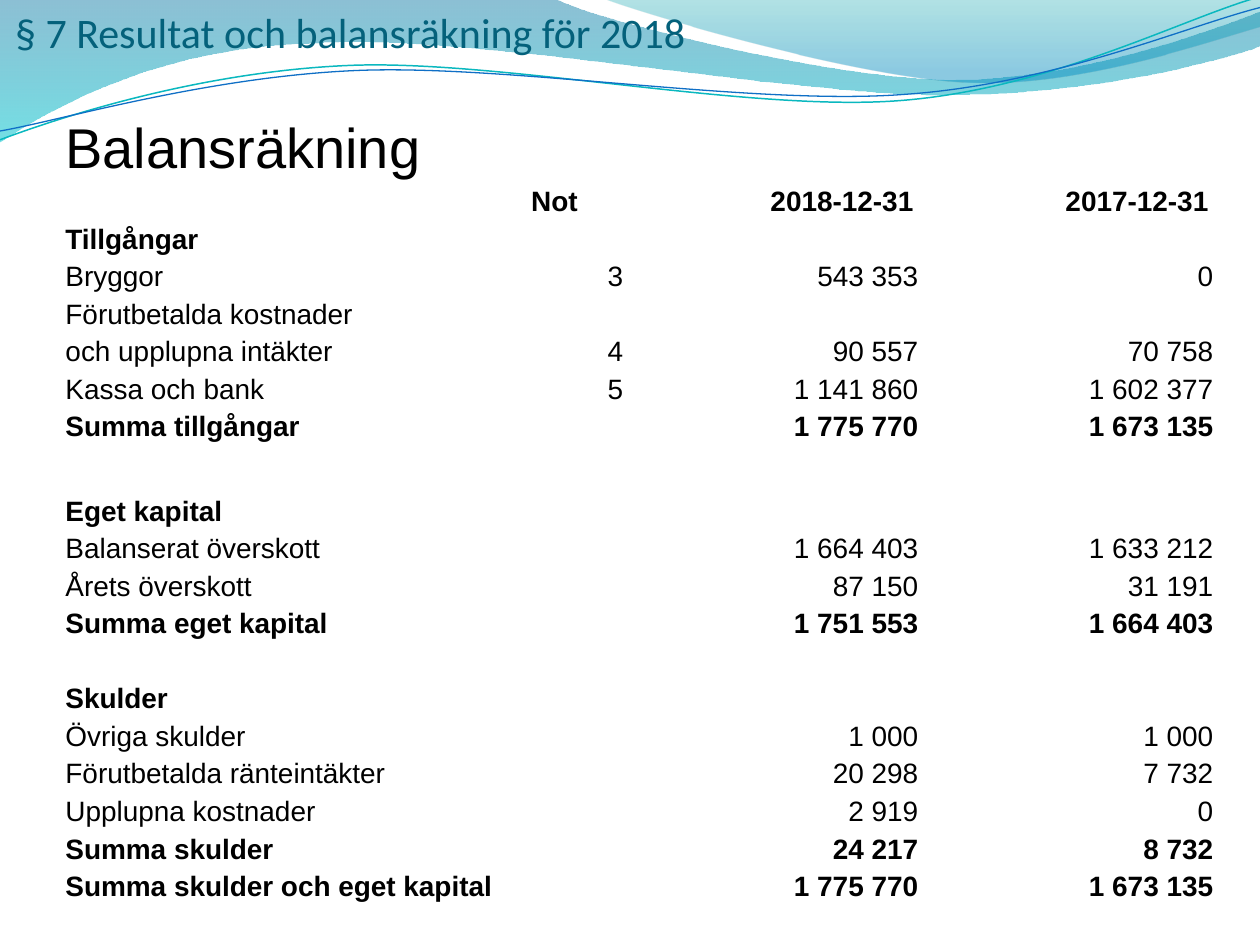
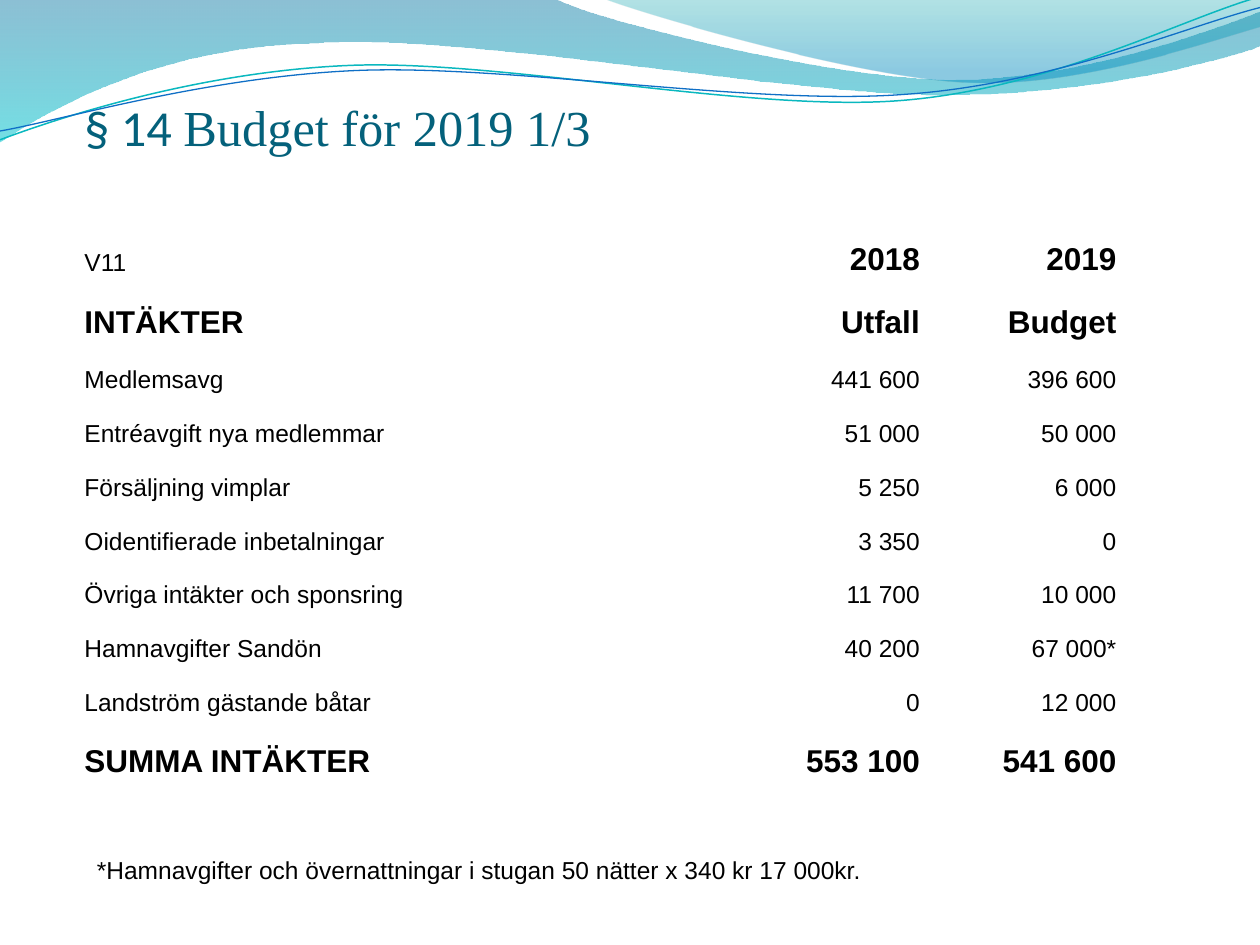
from dataclasses import dataclass

from lxml import etree
from pptx import Presentation
from pptx.dml.color import RGBColor
from pptx.enum.text import MSO_ANCHOR, MSO_AUTO_SIZE, PP_ALIGN
from pptx.oxml.ns import qn
from pptx.util import Inches, Pt

LEFT, MID, RIGHT = PP_ALIGN.LEFT, PP_ALIGN.CENTER, PP_ALIGN.RIGHT
TOP, BOTTOM = MSO_ANCHOR.TOP, MSO_ANCHOR.BOTTOM
NO_FIT = MSO_AUTO_SIZE.NONE
NO_STYLE = "{2D5ABB26-0587-4C30-8999-92F81FD0307C}"
TITLE_ONLY = 5


@dataclass(frozen=True)
class Theme:
    title: str = "04617B"
    text: str = "000000"
    teal: str = "0AB8BF"
    blue: str = "0F6FC6"
    head: str = "Calibri"
    serif: str = "Times New Roman"
    body: str = "Arial"
    big: float = 32
    title_a: float = 24
    title_b: float = 28.8
    strong: float = 18
    sheet: float = 16
    small: float = 14


THEME = Theme()

# Each curve is a start point and its segments: 2 numbers for a line, 6 for a Bézier.
# Each stop is position in percent, colour, opacity in percent.
BANDS = [
    ((0, 0), [(4.4, -.01), (4.76, .17, 6.64, .63, 7.58, .63),
              (8.53, .63, 9.58, .26, 10, .09), (10.01, .36),
              (9.83, .44, 8.7, .76, 7.46, .75), (6.22, .75, 3.82, .28, 2.57, .34),
              (1.29, .36, .46, .83, -.01, 1.13), (0, 0)],
     [(0, "0074A1", 45), (100, "00C6CF", 55)]),
    ((4.79, -.01), [(5.09, .11, 6.82, .62, 7.69, .65),
                    (8.56, .69, 9.61, .32, 10, .21), (10, 0), (4.79, -.01)],
     [(0, "00A1A9", 30), (80, "008BBF", 45)]),
]
LINES = [
    ((0, 1.11), [(.48, .93, 1.58, .57, 2.77, .52), (3.95, .47, 5.93, .89, 7.13, .8),
                 (8.33, .71, 9.38, .15, 9.98, -.02)], THEME.teal, .85),
    ((0, 1.04), [(.47, .96, 1.64, .61, 2.83, .56), (4.03, .51, 5.97, .84, 7.17, .75),
                 (8.36, .67, 9.41, .21, 10, .06)], THEME.blue, .75),
]

# Label, columns the label spans, note, 2018, 2017
BALANCE = [
    ("Balansräkning", 3, "", "", ""),
    ("", 1, "Not", "2018-12-31", "2017-12-31"),
    ("Tillgångar", 2, "", "", ""),
    ("Bryggor", 1, "3", "543 353", "0"),
    ("Förutbetalda kostnader", 3, "", "", ""),
    ("och upplupna intäkter", 3, "4", "90 557", "70 758"),
    ("Kassa och bank", 2, "5", "1 141 860", "1 602 377"),
    ("Summa tillgångar", 2, "", "1 775 770", "1 673 135"),
    ("", 1, "", "", ""),
    ("Eget kapital", 2, "", "", ""),
    ("Balanserat överskott", 2, "", "1 664 403", "1 633 212"),
    ("Årets överskott", 2, "", "87 150", "31 191"),
    ("Summa eget kapital", 3, "", "1 751 553", "1 664 403"),
    ("", 1, "", "", ""),
    ("Skulder", 1, "", "", ""),
    ("Övriga skulder", 2, "", "1 000", "1 000"),
    ("Förutbetalda ränteintäkter", 3, "", "20 298", "7 732"),
    ("Upplupna kostnader", 2, "", "2 919", "0"),
    ("Summa skulder", 2, "", "24 217", "8 732"),
    ("Summa skulder och eget kapital", 4, "", "1 775 770", "1 673 135"),
]
SECTIONS = ("Tillgångar", "Eget kapital", "Skulder")

BUDGET = [
    ("V11", "2018", "2019"),
    ("INTÄKTER", "Utfall", "Budget"),
    ("Medlemsavg", "441 600", "396 600"),
    ("Entréavgift nya medlemmar", "51 000", "50 000"),
    ("Försäljning vimplar", "5 250", "6 000"),
    ("Oidentifierade inbetalningar", "3 350", "0"),
    ("Övriga intäkter och sponsring", "11 700", "10 000"),
    ("Hamnavgifter Sandön", "40 200", "67 000*"),
    ("Landström gästande båtar", "0", "12 000"),
    ("SUMMA INTÄKTER", "553 100", "541 600"),
]


def style(run, size, font=THEME.body, color=THEME.text, bold=False):
    run.font.size = Pt(size)
    run.font.name = font
    run.font.bold = bold
    run.font.color.rgb = RGBColor.from_string(color)


def outline(slide, start, parts, close):
    """Draw through all points, then turn each Bézier's three lines into one curve."""
    points = [(Inches(x), Inches(y)) for part in parts
              for x, y in zip(part[::2], part[1::2])]
    builder = slide.shapes.build_freeform(*map(Inches, start), scale=1.0)
    builder.add_line_segments(points, close=close)
    shape = builder.convert_to_shape()
    shape.shadow.inherit = False
    legs = iter(list(shape.element.iter(qn("a:lnTo"))))
    for part in parts:
        first = next(legs)
        if len(part) == 6:
            first.tag = qn("a:cubicBezTo")
            for leg in (next(legs), next(legs)):
                first.append(leg[0])
                leg.getparent().remove(leg)
    return shape


def band(slide, start, parts, stops):
    shape = outline(slide, start, parts, True)
    shape.line.fill.background()
    shape.fill.gradient()
    shape.fill.gradient_angle = 270
    for stop, (place, color, opacity) in zip(shape.fill.gradient_stops, stops):
        stop.position = place / 100
        stop.color.rgb = RGBColor.from_string(color)
    tints = shape.element.spPr.iter(qn("a:srgbClr"))
    for tint, (place, color, opacity) in zip(tints, stops):
        etree.SubElement(tint, qn("a:alpha"), val=str(opacity * 1000))
    return shape


def stroke(slide, start, parts, color, width):
    shape = outline(slide, start, parts, False)
    shape.fill.background()
    shape.line.color.rgb = RGBColor.from_string(color)
    shape.line.width = Pt(width)
    return shape


def waves(slide):
    """Draw the waves, then move them to the layout that all slides share."""
    shapes = [band(slide, *item) for item in BANDS]
    shapes += [stroke(slide, *item) for item in LINES]
    tree = slide.slide_layout.shapes.element
    for order, shape in enumerate(shapes):
        shape.element.nvSpPr.cNvPr.set("id", str(100 + order))
        tree.insert(2 + order, shape.element)


def title(slide, box, parts, size, anchor=TOP, foot=0):
    """Fill the title with (text, font) parts; foot is the gap below the text."""
    shape = slide.shapes.title
    shape.left, shape.top, shape.width, shape.height = map(Inches, box)
    frame = shape.text_frame
    frame.auto_size = NO_FIT
    frame.word_wrap = True
    frame.vertical_anchor = anchor
    frame.margin_left = frame.margin_right = 0
    frame.margin_top, frame.margin_bottom = Inches(.05), Inches(foot)
    para = frame.paragraphs[0]
    para.alignment = LEFT
    for text, font in parts:
        run = para.add_run()
        run.text = text
        style(run, size, font, THEME.title)


def grid(slide, left, top, cols, rows):
    """Add a plain table with the given column widths and row heights."""
    frame = slide.shapes.add_table(len(rows), len(cols), Inches(left), Inches(top),
                                   Inches(sum(cols)), Inches(sum(rows)))
    table = frame.table
    table.first_row = table.horz_banding = False
    frame.element.find(".//" + qn("a:tableStyleId")).text = NO_STYLE
    for col, width in zip(table.columns, cols):
        col.width = Inches(width)
    for row, height in zip(table.rows, rows):
        row.height = Inches(height)
    return table


def put(cell, text, size, bold, align, inset=0):
    cell.fill.background()
    cell.vertical_anchor = BOTTOM
    cell.margin_left = cell.margin_right = cell.margin_top = Inches(inset)
    cell.margin_bottom = 0
    para = cell.text_frame.paragraphs[0]
    if text:
        para.text = text
        para.alignment = align
        style(para.runs[0], size, bold=bold)
    else:
        etree.SubElement(para._p, qn("a:endParaRPr"), sz=str(size * 100))


def balance(slide, left, top, width):
    wide, head, gap = 1.23, .47, .37
    slim = (width - 2 * wide) / 6
    cols = [slim] * 5 + [wide, slim, wide]
    pitch = 5.37 / 18
    rows = [head] + [pitch] * 7 + [gap] + [pitch] * 11
    table = grid(slide, left, top, cols, rows)
    for r, (label, span, note, now, past) in enumerate(BALANCE):
        if span > 1:
            table.cell(r, 0).merge(table.cell(r, span - 1))
        texts = {0: label, 3: note, 5: now, 7: past}
        bold = r == 1 or label in SECTIONS or label.startswith("Summa")
        for c in range(len(cols)):
            cell = table.cell(r, c)
            if cell.is_spanned:
                continue
            align = LEFT if c == 0 else MID if r == 1 else RIGHT
            size = THEME.big if r == c == 0 else THEME.sheet
            put(cell, texts.get(c, ""), size, bold, align, .01)


def budget(slide, left, top, height):
    strong, tall = (0, 1, len(BUDGET) - 1), .5
    low = (height - tall * len(strong)) / (len(BUDGET) - len(strong))
    rows = [tall if r in strong else low for r in range(len(BUDGET))]
    table = grid(slide, left, top, [5.3, 1.33, 1.56], rows)
    for r, texts in enumerate(BUDGET):
        for c, text in enumerate(texts):
            bold = r in strong and (r, c) != (0, 0)
            size = THEME.strong if bold else THEME.small
            put(table.cell(r, c), text, size, bold, RIGHT if c else LEFT)


def footnote(slide, box, text):
    frame = slide.shapes.add_textbox(*map(Inches, box)).text_frame
    frame.word_wrap = False
    frame.text = text
    style(frame.paragraphs[0].runs[0], THEME.small)


def main():
    deck = Presentation()
    deck.slide_width, deck.slide_height = Inches(10), Inches(7.5)
    layout = deck.slide_layouts[TITLE_ONLY]

    result = deck.slides.add_slide(layout)
    waves(result)
    title(result, (.12, 0, 7.32, .71),
          [("§ 7 Resultat och balansräkning för 2018", THEME.head)], THEME.title_a)
    balance(result, .51, .92, 9.13)

    plan = deck.slides.add_slide(layout)
    title(plan, (.67, .74, 9, .8),
          [("§ 14 ", THEME.head), ("Budget för 2019 1/3", THEME.serif)],
          THEME.title_b, BOTTOM, .3)
    budget(plan, .67, 1.7, 4.49)
    footnote(plan, (.67, 6.74, 6.29, .34),
             "*Hamnavgifter och övernattningar i stugan 50 nätter x 340 kr 17 000kr.")

    deck.save("out.pptx")


if __name__ == "__main__":
    main()
